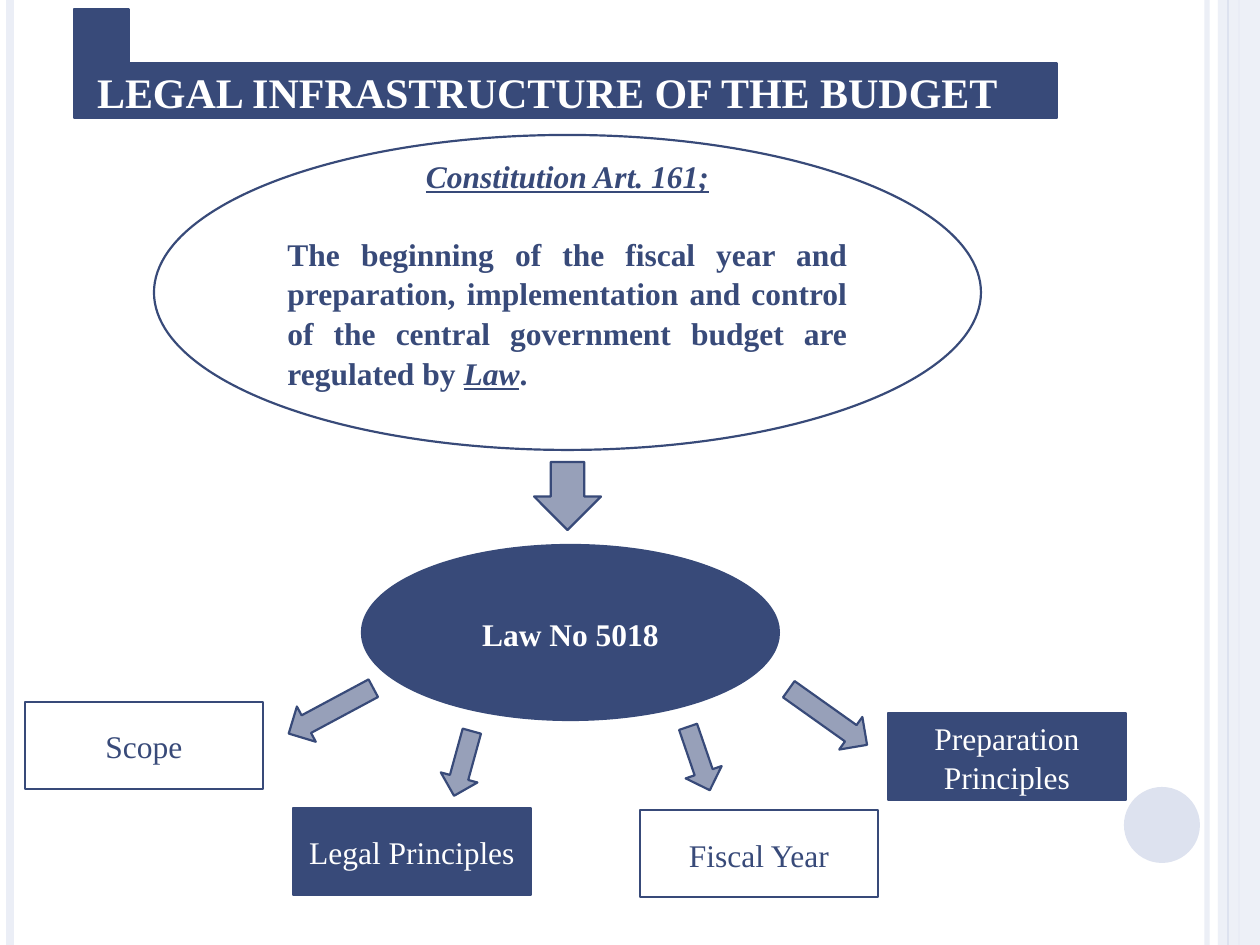
import pptx
import pptx.dml.color
import pptx.enum.shapes
import pptx.enum.text
import pptx.oxml.ns
import pptx.util
from lxml import etree

RGB = pptx.dml.color.RGBColor
SHAPE = pptx.enum.shapes.MSO_SHAPE
ALIGN = pptx.enum.text.PP_ALIGN
ANCHOR = pptx.enum.text.MSO_ANCHOR
qn = pptx.oxml.ns.qn

NAVY = RGB(0x38, 0x4A, 0x79)
WHITE = RGB(0xFF, 0xFF, 0xFF)
PALE = RGB(0xEB, 0xEE, 0xF6)
MIST = RGB(0xDD, 0xE2, 0xEF)
EMU_PER_PX = 914400 / 126


def px(n):
    return pptx.util.Emu(round(n * EMU_PER_PX))


class Deck:
    font = "Times New Roman"
    size = 18
    outline = 1.25
    spacing = 1.05

    def __init__(self, width, height):
        self.prs = pptx.Presentation()
        self.prs.slide_width, self.prs.slide_height = px(width), px(height)
        self.s = self.prs.slides.add_slide(self.prs.slide_layouts[5])

    def fade(self, sp, percent):
        color = next(sp._element.spPr.iter(qn("a:srgbClr")))
        etree.SubElement(color, qn("a:alpha")).set("val", str(percent * 1000))

    def rule(self, x, color, width, alpha=100):
        sp = self.s.shapes.add_connector(
            pptx.enum.shapes.MSO_CONNECTOR.STRAIGHT, px(x), 0, px(x), self.prs.slide_height)
        sp.line.color.rgb = color
        sp.line.width = pptx.util.Pt(width)
        if alpha < 100:
            self.fade(sp, alpha)
        etree.SubElement(sp._element.spPr, qn("a:effectLst"))

    def shape(self, kind, box, fill, line=NAVY, alpha=100, rotation=0):
        sp = self.s.shapes.add_shape(kind, *map(px, box))
        sp.shadow.inherit = False
        sp.fill.solid()
        sp.fill.fore_color.rgb = fill
        if alpha < 100:
            self.fade(sp, alpha)
        if line is None:
            sp.line.fill.background()
        else:
            sp.line.color.rgb = line
            sp.line.width = pptx.util.Pt(self.outline)
        sp.rotation = rotation
        return sp

    def run(self, p, text, color, size=None, bold=False, emphasis=False):
        r = p.add_run()
        r.text = text
        r.font.name = self.font
        r.font.size = pptx.util.Pt(size or self.size)
        r.font.color.rgb = color
        r.font.bold = bold
        r.font.italic = r.font.underline = emphasis

    def paragraph(self, p, align):
        p.alignment = align
        p.line_spacing = self.spacing
        return p

    def node(self, kind, box, text, fill, color, bold=False):
        tf = self.shape(kind, box, fill).text_frame
        tf.word_wrap = True
        tf.vertical_anchor = ANCHOR.MIDDLE
        self.run(self.paragraph(tf.paragraphs[0], ALIGN.CENTER), text, color, bold=bold)

    def title(self, box, text):
        sp = self.s.shapes.title
        sp._element.getparent().append(sp._element)
        sp.left, sp.top, sp.width, sp.height = map(px, box)
        tf = sp.text_frame
        tf.auto_size = pptx.enum.text.MSO_AUTO_SIZE.NONE
        tf.word_wrap = True
        tf.vertical_anchor = ANCHOR.MIDDLE
        tf.margin_left = px(24)
        tf.margin_right = tf.margin_top = tf.margin_bottom = 0
        p = tf.paragraphs[0]
        p.alignment = ALIGN.LEFT
        self.run(p, text, WHITE, size=24, bold=True)

    def article(self, box, heading, body):
        tf = self.shape(SHAPE.OVAL, box, WHITE).text_frame
        tf.word_wrap = True
        tf.vertical_anchor = ANCHOR.MIDDLE
        tf.margin_bottom = px(44)
        p = self.paragraph(tf.paragraphs[0], ALIGN.CENTER)
        p.space_after = pptx.util.Pt(21.6)
        self.run(p, heading, NAVY, bold=True, emphasis=True)
        p = self.paragraph(tf.add_paragraph(), ALIGN.JUSTIFY)
        for text, emphasis in body:
            self.run(p, text, NAVY, bold=True, emphasis=emphasis)

    def arrow(self, box, rotation=0):
        self.shape(SHAPE.DOWN_ARROW, box, NAVY, alpha=52, rotation=rotation)


def main():
    deck = Deck(1260, 945)
    deck.rule(1207, PALE, 3, alpha=93)
    deck.rule(10, PALE, 4.5)
    deck.rule(1239, MIST, 1.5)
    deck.shape(SHAPE.RECTANGLE, (1218, 0, 42, 945), PALE, line=None, alpha=87)
    deck.rule(1228, MIST, 0.75)
    deck.shape(SHAPE.OVAL, (1124, 787, 76, 76), MIST, line=None)

    deck.shape(SHAPE.CORNER, (74, 9, 983, 109), NAVY)
    deck.title((73, 65, 984, 54), "LEGAL INFRASTRUCTURE OF THE BUDGET")

    deck.article((154, 135, 827, 315), "Constitution Art. 161;", [
        ("The beginning of the fiscal year and preparation, implementation and control "
         "of the central government budget are regulated by ", False),
        ("Law", True),
        (".", False),
    ])

    for x, y, text, fill, color in [
        (25, 702, "Scope", WHITE, NAVY),
        (293, 808, "Legal Principles", NAVY, WHITE),
        (640, 810, "Fiscal Year", WHITE, NAVY),
        (888, 713, "Preparation Principles", NAVY, WHITE),
    ]:
        deck.node(SHAPE.RECTANGLE, (x, y, 238, 87), text, fill, color)
    deck.node(SHAPE.OVAL, (362, 545, 417, 175), "Law No 5018", NAVY, WHITE, bold=True)

    deck.arrow((534, 462, 67, 68))
    for x, y, width, height, rotation in [
        (311, 663, 40, 96, 61.8),
        (444, 730, 38, 67, 15.4),
        (680, 725, 38, 67, 341.1),
        (808, 669, 40, 96, 305.4),
    ]:
        deck.arrow((x, y, width, height), rotation)

    deck.prs.save("out.pptx")


if __name__ == "__main__":
    main()
